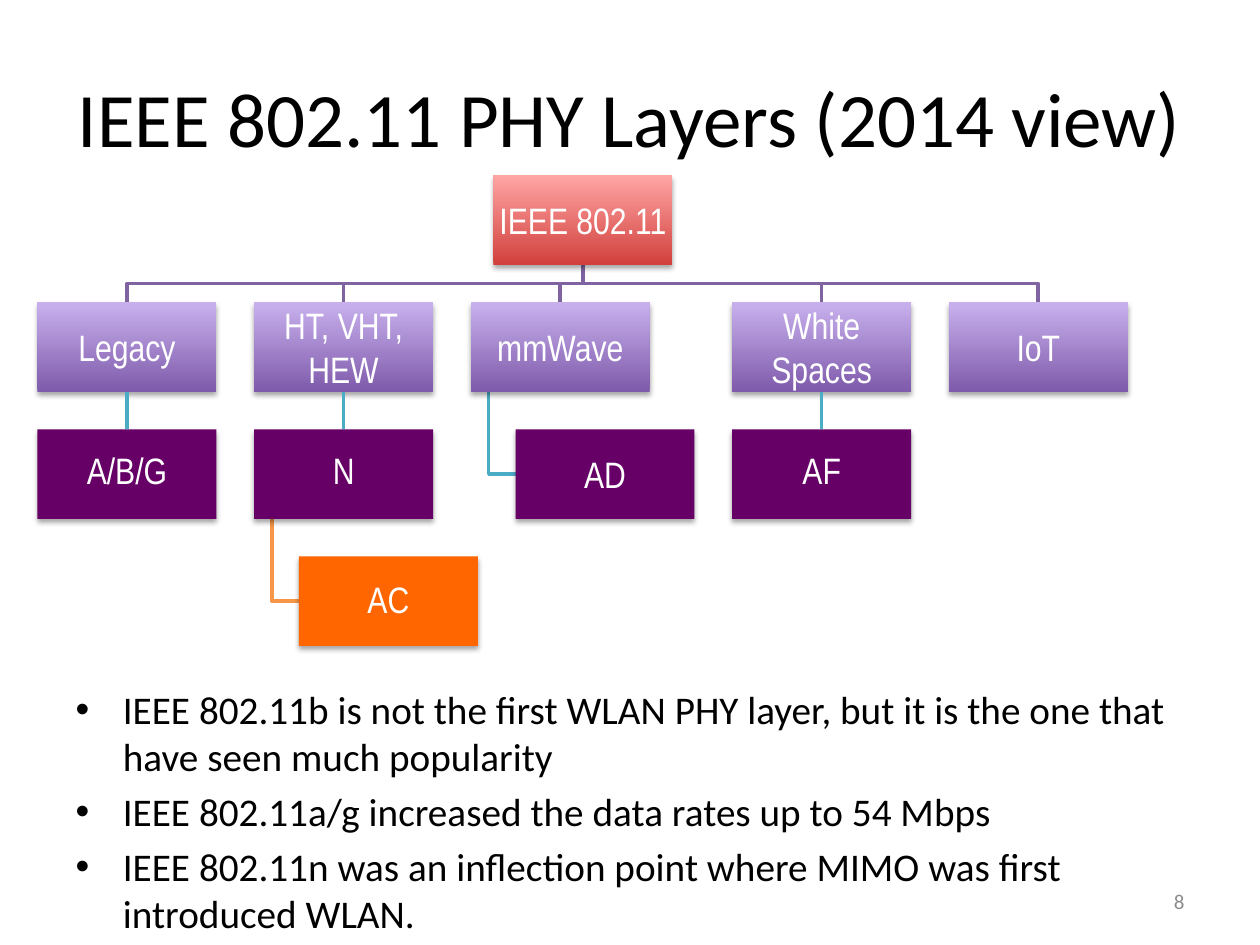
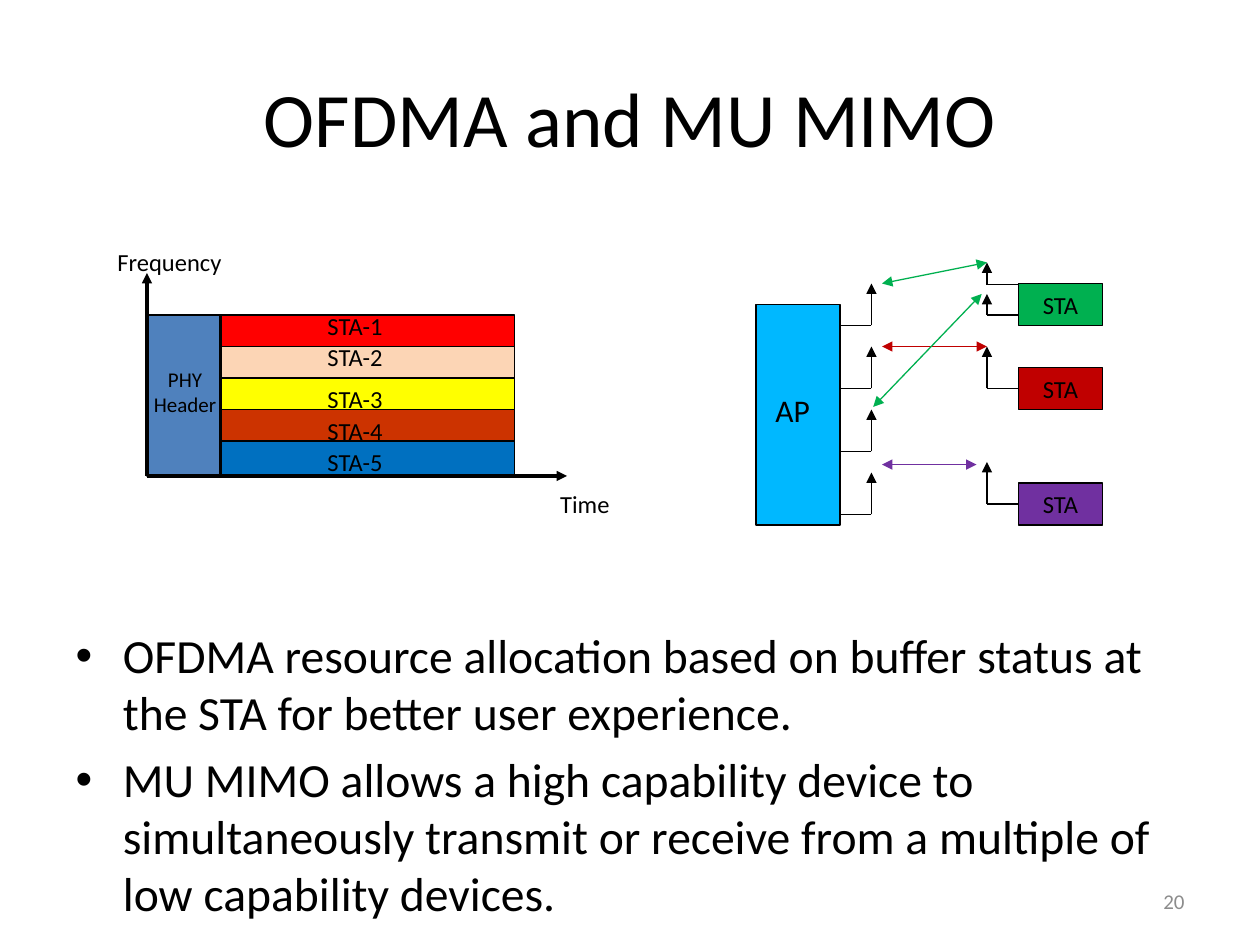
from lxml import etree
from pptx import Presentation
from pptx.dml.color import RGBColor
from pptx.enum import shapes, text
from pptx.oxml.ns import qn
from pptx.util import Pt

COLORS = {
    "black": "000000", "white": "FFFFFF", "number": "8C8C8C",
    "root_dark": "D1403C", "root_light": "FFA6A5",
    "family_dark": "7F5BAB", "family_light": "C8B0ED",
    "amendment": "660066", "successor": "FF6600",
    "family_link": "8064A2", "amendment_link": "4BACC6", "successor_link": "F79646",
    "ap": "00B8FF", "green": "00B050", "crimson": "C00000", "purple": "7030A0",
    "header": "4F81BD", "red": "FF0000", "peach": "FCD5B5",
    "yellow": "FFFF00", "rust": "CC3300", "blue": "0070C0",
}
BODY_FONT, TREE_FONT = "Calibri", "Arial Narrow"
LEFT, CENTER, RIGHT = text.PP_ALIGN.LEFT, text.PP_ALIGN.CENTER, text.PP_ALIGN.RIGHT
TOP, MIDDLE = text.MSO_ANCHOR.TOP, text.MSO_ANCHOR.MIDDLE


def rgb(name):
    return RGBColor.from_string(COLORS[name])


def points(*values):
    return [Pt(v) for v in values]


def write(tf, lines, size, color="black", font=BODY_FONT, align=None, anchor=None,
          spacing=None, insets=None, wrap=True):
    tf.word_wrap = wrap
    if anchor is not None:
        tf.vertical_anchor = anchor
    if insets:
        tf.margin_left, tf.margin_top, tf.margin_right, tf.margin_bottom = points(*insets)
    for i, line in enumerate(lines):
        p = tf.add_paragraph() if i else tf.paragraphs[0]
        p.alignment = align
        if spacing:
            p.line_spacing = spacing
        r = p.add_run()
        r.text = line
        r.font.size, r.font.name = Pt(size), font
        r.font.color.rgb = rgb(color)


def add_label(s, box, line, size=14, **fmt):
    sp = s.shapes.add_textbox(*points(*box))
    write(sp.text_frame, [line], size, **fmt)


def add_rect(s, box, fill, outline="black"):
    sp = s.shapes.add_shape(shapes.MSO_SHAPE.RECTANGLE, *points(*box))
    sp.shadow.inherit = False
    if isinstance(fill, tuple):
        sp.fill.gradient()
        sp.fill.gradient_angle = 90
        for stop, color in zip(sp.fill.gradient_stops, fill):
            stop.color.rgb = rgb(color)
    else:
        sp.fill.solid()
        sp.fill.fore_color.rgb = rgb(fill)
    if outline:
        sp.line.color.rgb = rgb(outline)
        sp.line.width = Pt(0.75)
    else:
        sp.line.fill.background()
    return sp


def add_line(s, start, end, color="black", width=0.75, head=False, tail=False):
    c = s.shapes.add_connector(shapes.MSO_CONNECTOR.STRAIGHT, *points(*start, *end))
    c.line.color.rgb = rgb(color)
    c.line.width = Pt(width)
    ln = c.line._get_or_add_ln()
    for tag, wanted in (("a:headEnd", head), ("a:tailEnd", tail)):
        if wanted:
            etree.SubElement(ln, qn(tag), type="triangle")
    etree.SubElement(c.element.spPr, qn("a:effectLst"))
    return c


def add_elbow(s, corners, color):
    start, *rest = [points(*corner) for corner in corners]
    builder = s.shapes.build_freeform(*start)
    builder.add_line_segments(rest, close=False)
    sp = builder.convert_to_shape()
    sp.shadow.inherit = False
    sp.fill.background()
    sp.line.color.rgb = rgb(color)
    sp.line.width = Pt(2)


def add_content_slide(prs, title, bullets, body_box, size, number):
    s = prs.slides.add_slide(prs.slide_layouts[1])
    write(s.shapes.title.text_frame, [title], 44, align=CENTER, anchor=MIDDLE)
    body = s.placeholders[1]
    body.left, body.top, body.width, body.height = points(*body_box)
    body.text_frame.auto_size = text.MSO_AUTO_SIZE.NONE
    write(body.text_frame, bullets, size)
    add_label(s, (516, 500.5, 168, 28.75), number, 12, color="number", align=RIGHT, anchor=MIDDLE)
    return s


def add_tree_box(s, box, label, fill, spacing=None):
    sp = add_rect(s, box, fill, outline=None)
    effects = sp.element.spPr.find(qn("a:effectLst"))
    shadow = etree.SubElement(effects, qn("a:outerShdw"), blurRad=str(Pt(3.1)),
                              dist=str(Pt(1.8)), dir="5400000", rotWithShape="0")
    color = etree.SubElement(shadow, qn("a:srgbClr"), val=COLORS["black"])
    etree.SubElement(color, qn("a:alpha"), val="35000")
    write(sp.text_frame, [label], 21, color="white", font=TREE_FONT, align=CENTER,
          anchor=MIDDLE, spacing=spacing, insets=(0.7,) * 4)
    return sp


def draw_phy_tree(s, box):
    x, y, w, _ = box
    box_w, box_h, gap = 102.3, 51.1, 21.5
    indent, stem = box_w / 4, box_w / 10
    levels = [y + i * (box_h + gap) for i in range(4)]
    root_x = x + w / 2

    def node(left, level, label, fill, spacing=None):
        return add_tree_box(s, (left, levels[level], box_w, box_h), label, fill, spacing)

    def link_below(parent, child):
        c = add_line(s, (0, 0), (0, 0), "amendment_link", 2)
        c.begin_connect(parent, 2)
        c.end_connect(child, 0)

    def link_aside(left, level, color):
        middle = levels[level] + box_h / 2
        add_elbow(s, [(left + stem, levels[level - 1] + box_h),
                      (left + stem, middle), (left + indent, middle)], color)

    families = [("Legacy", "A/B/G"), ("HT, VHT, HEW", "N"), ("mmWave", None),
                ("White Spaces", "AF"), ("IoT", None)]
    lefts = [x + i * (box_w + gap) + (indent if i > 2 else 0) for i in range(len(families))]
    for left in lefts:
        center, bus = left + box_w / 2, levels[1] - gap / 2
        add_elbow(s, [(root_x, levels[0] + box_h), (root_x, bus),
                      (center, bus), (center, levels[1])], "family_link")
    link_aside(lefts[1], 3, "successor_link")
    link_aside(lefts[2], 2, "amendment_link")

    node(root_x - box_w / 2, 0, "IEEE 802.11", ("root_dark", "root_light"))
    for left, (family, amendment) in zip(lefts, families):
        parent = node(left, 1, family, ("family_dark", "family_light"))
        if amendment:
            link_below(parent, node(left, 2, amendment, "amendment", 0.8))
    node(lefts[1] + indent, 3, "AC", "successor", 0.9)
    node(lefts[2] + indent, 2, "AD", "amendment")


def draw_ofdma(s, box):
    x, y, w, h = box
    pitch, band_h, header_w = 18, 20, 42
    bottom = y + h
    bands = [("red", -6), ("peach", -6), ("yellow", 0), ("rust", 0), ("blue", 0)]
    for i, (color, _) in enumerate(bands):
        add_rect(s, (x, y + i * pitch, w, band_h), color)
    add_line(s, (x, bottom), (x + 240, bottom), width=1.75, tail=True)
    add_line(s, (x + header_w, y), (x + header_w, bottom), width=1.25)
    header = add_rect(s, (x - 0.5, y, header_w, h - 0.6), "header")
    write(header.text_frame, ["PHY", "Header"], 12, align=CENTER, anchor=MIDDLE,
          insets=(2.5, 0, 0, 3.5), wrap=False)
    add_line(s, (x, bottom), (x, y - 24), width=1.75, tail=True)
    add_label(s, (x - 24, y - 42.5, 74, 24.25), "Frequency", wrap=False)
    add_label(s, (x + 229, y + 96, 43, 24.25), "Time", wrap=False)
    for i, (_, shift) in enumerate(bands):
        add_label(s, (x + 96, y + i * pitch + shift, 46, 24.25), f"STA-{i + 1}", wrap=False)


def draw_antenna(s, base, mast_x, rise, station=None):
    x, y = base
    lead = add_line(s, (mast_x, y), (x, y))
    if station is not None:
        lead.end_connect(station, 1)
    add_line(s, (mast_x, y), (mast_x, y - rise), tail=True)


def draw_mu_mimo(s, box):
    x, y, w, h = box
    device_w, station_h, lead = 48, 24, 18
    station_x = x + w - device_w
    mast_x = station_x - lead

    ap = add_rect(s, (x, y + h - 126, device_w, 126), "ap")
    write(ap.text_frame, ["AP"], 18, align=CENTER, anchor=MIDDLE, insets=(0, 0, 6, 6))
    for i in range(4):
        draw_antenna(s, (x + device_w, y + 36 + 36 * i), x + device_w + lead, 24)

    for color, top in (("green", 12), ("crimson", 60), ("purple", 126)):
        station = add_rect(s, (station_x, y + top, device_w, station_h), color)
        write(station.text_frame, ["STA"], 14, align=CENTER, anchor=MIDDLE, insets=(0,) * 4)
        if color == "green":
            for base, rise in ((12.7, 12.7), (30, 12)):
                draw_antenna(s, (station_x, y + base), mast_x, rise)
        else:
            draw_antenna(s, (station_x, y + top + station_h / 2), mast_x, 24, station)

    streams = [("green", (72, 12), (132, 0)), ("crimson", (72, 48), (132, 48)),
               ("purple", (72, 115.5), (126, 115.5)), ("green", (67, 82.5), (129, 18))]
    for color, (x1, y1), (x2, y2) in streams:
        add_line(s, (x + x1, y + y1), (x + x2, y + y2), color, head=True, tail=True)


def main():
    prs = Presentation()
    prs.slide_width, prs.slide_height = points(720, 540)

    s = add_content_slide(prs, "IEEE 802.11 PHY Layers (2014 view)", [
        "IEEE 802.11b is not the first WLAN PHY layer, but it is the one that have seen much popularity",
        "IEEE 802.11a/g increased the data rates up to 54 Mbps",
        "IEEE 802.11n was an inflection point where MIMO was first introduced WLAN.",
    ], (36, 388, 648, 137.5), 22.4, "8")
    draw_phy_tree(s, (21.4, 100.2, 623.5, 269))

    s = add_content_slide(prs, "OFDMA and MU MIMO", [
        "OFDMA resource allocation based on buffer status at the STA for better user experience.",
        "MU MIMO allows a high capability device to simultaneously transmit or receive from a multiple "
        "of low capability devices.",
    ], (36, 354.25, 648, 150.5), 27.2, "20")
    draw_ofdma(s, (84, 180, 210, 92))
    draw_mu_mimo(s, (432, 150, 198, 150))

    prs.save("out.pptx")


if __name__ == "__main__":
    main()
